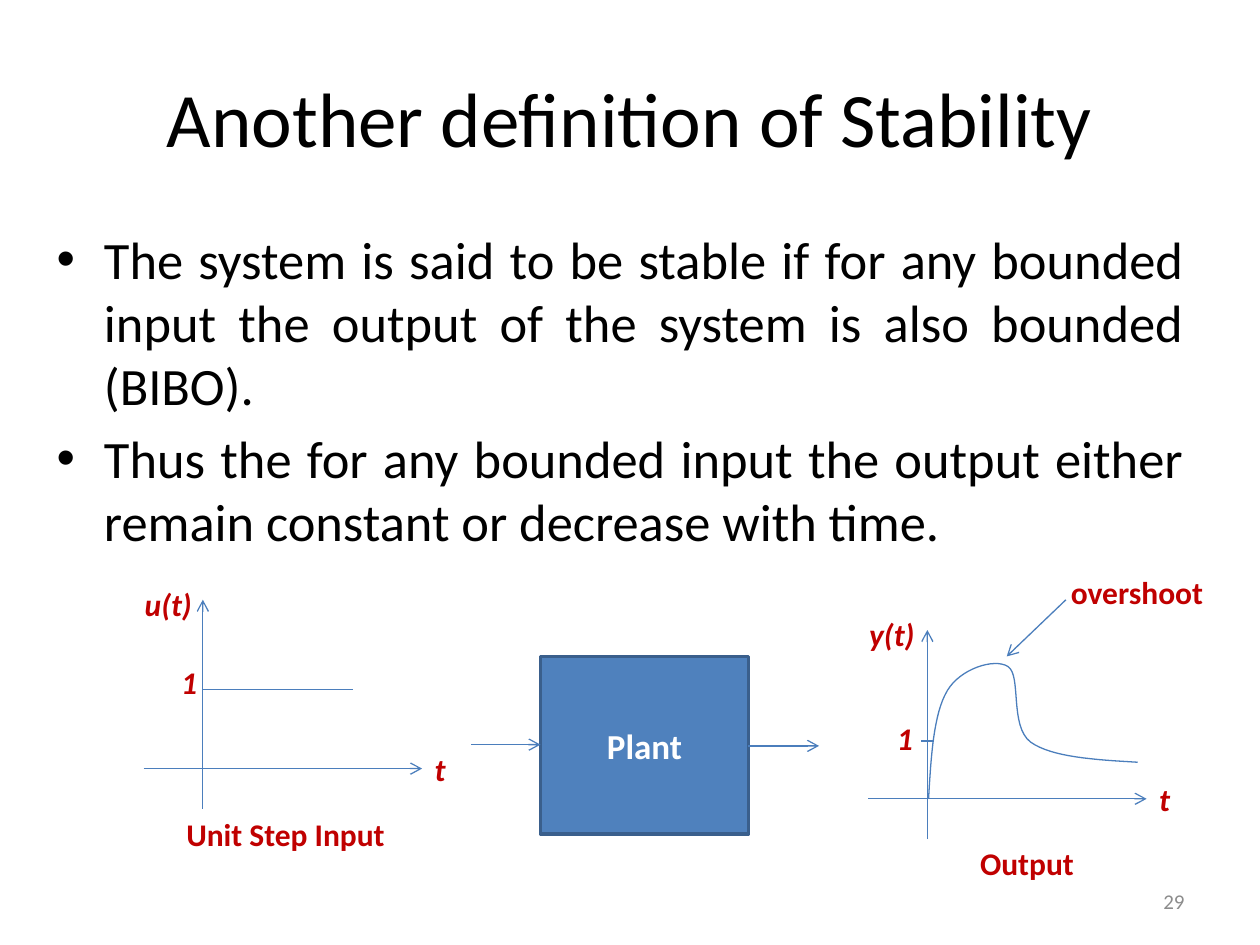
from pptx import Presentation
from pptx.dml.color import RGBColor
from pptx.enum import shapes, text
from pptx.oxml.ns import qn
from pptx.util import Inches, Pt
from lxml import etree

BLUE = "4B7EBC"
RED = "C00000"
LEFT, MID, RIGHT, JUST = (
    text.PP_ALIGN.LEFT, text.PP_ALIGN.CENTER, text.PP_ALIGN.RIGHT, text.PP_ALIGN.JUSTIFY)
BODY = (
    "The system is said to be stable if for any bounded input the output of "
    "the system is also bounded (BIBO). ",
    "Thus the for any bounded input the output either remain constant or "
    "decrease with time.",
)
START = (7.37, 6.34)
CURVE = (
    ((7.39, 6), (7.41, 5.66), (7.52, 5.48)),
    ((7.62, 5.31), (7.89, 5.22), (8, 5.29)),
    ((8.11, 5.36), (8.01, 5.76), (8.18, 5.89)),
    ((8.35, 6.01), (8.69, 6.03), (9.03, 6.05)),
)


def paint(hue):
    return RGBColor.from_string(hue)


def place(shape, x, y, w, h):
    shape.left, shape.top = Inches(x), Inches(y)
    shape.width, shape.height = Inches(w), Inches(h)


def write(shape, *lines, size=18, hue=RED, bold=False, slant=False, align=LEFT,
          anchor=text.MSO_ANCHOR.TOP, wrap=True):
    frame = shape.text_frame
    frame.auto_size = text.MSO_AUTO_SIZE.NONE if wrap else text.MSO_AUTO_SIZE.SHAPE_TO_FIT_TEXT
    frame.word_wrap = wrap
    frame.vertical_anchor = anchor
    for i, line in enumerate(lines):
        para = frame.add_paragraph() if i else frame.paragraphs[0]
        para.alignment = align
        run = para.add_run()
        run.text = line
        font = run.font
        font.name, font.size, font.bold, font.italic = "Calibri", Pt(size), bold, slant
        font.color.rgb = paint(hue)


def label(slide, words, x, y, w, slant=False):
    box = slide.shapes.add_textbox(Inches(x), Inches(y), Inches(w), Inches(0.4))
    write(box, words, bold=True, slant=slant, wrap=False)


def line(slide, x1, y1, x2, y2, arrow=True):
    link = slide.shapes.add_connector(
        shapes.MSO_CONNECTOR.STRAIGHT, Inches(x1), Inches(y1), Inches(x2), Inches(y2))
    link.line.color.rgb = paint(BLUE)
    link.line.width = Pt(0.75)
    if arrow:
        etree.SubElement(link.line._get_or_add_ln(), qn("a:tailEnd"), type="arrow")
    etree.SubElement(link._element.spPr, qn("a:effectLst"))


def axes(slide, x, y, name):
    line(slide, x - 0.47, y, x + 1.74, y)
    line(slide, x, y + 0.32, x, y - 1.34)
    label(slide, name, x - 0.56, y - 1.51, 0.58, slant=True)
    label(slide, "t", x + 1.74, y - 0.2, 0.29, slant=True)


def bend(a, b, c, d, t):
    s = 1 - t
    return tuple(Inches(s**3 * p + 3 * s * s * t * q + 3 * s * t * t * r + t**3 * e)
                 for p, q, r, e in zip(a, b, c, d))


def curve(slide, start, parts, steps=16):
    pen = slide.shapes.build_freeform(Inches(start[0]), Inches(start[1]), scale=1.0)
    for b, c, d in parts:
        pen.add_line_segments(
            [bend(start, b, c, d, i / steps) for i in range(1, steps + 1)], close=False)
        start = d
    shape = pen.convert_to_shape()
    shape.shadow.inherit = False
    shape.fill.background()
    shape.line.color.rgb = paint(BLUE)
    shape.line.width = Pt(0.75)


def block(slide, words, x, y, w, h):
    box = slide.shapes.add_shape(
        shapes.MSO_SHAPE.RECTANGLE, Inches(x), Inches(y), Inches(w), Inches(h))
    box.shadow.inherit = False
    box.fill.solid()
    box.fill.fore_color.rgb = paint("4F81BD")
    box.line.color.rgb = paint("3A5F8C")
    box.line.width = Pt(2)
    write(box, words, size=20, hue="FFFFFF", bold=True, align=MID,
          anchor=text.MSO_ANCHOR.MIDDLE)


def main():
    deck = Presentation()
    deck.slide_width, deck.slide_height = Inches(10), Inches(7.5)
    slide = deck.slides.add_slide(deck.slide_layouts[1])
    title, body = slide.placeholders
    place(title, 0.5, 0.3, 9, 1.25)
    write(title, "Another definition of Stability", size=44, hue="000000", align=MID,
          anchor=text.MSO_ANCHOR.MIDDLE)
    place(body, 0.35, 1.75, 9.15, 4.95)
    write(body, *BODY, size=30, hue="000000", align=JUST)
    page = slide.shapes.add_textbox(Inches(7.17), Inches(6.95), Inches(2.33), Inches(0.4))
    write(page, "29", size=12, hue="8C8C8C", align=RIGHT, anchor=text.MSO_ANCHOR.MIDDLE)

    axes(slide, 1.61, 6.1, "u(t)")
    line(slide, 1.61, 5.47, 2.8, 5.47, arrow=False)
    label(slide, "1", 1.34, 5.21, 0.33, slant=True)
    label(slide, "Unit Step Input", 1.38, 6.42, 1.78)

    block(slide, "Plant", 4.29, 5.21, 1.65, 1.41)
    line(slide, 3.74, 5.91, 4.29, 5.91)
    line(slide, 5.94, 5.92, 6.5, 5.92)

    axes(slide, 7.36, 6.34, "y(t)")
    curve(slide, START, CURVE)
    label(slide, "Output", 7.68, 6.65, 0.95)
    label(slide, "1", 7.02, 5.66, 0.33, slant=True)
    line(slide, 7.31, 5.88, 7.41, 5.88, arrow=False)
    line(slide, 8.46, 4.76, 7.99, 5.21)
    label(slide, "overshoot", 8.4, 4.5, 1.26)
    deck.save("out.pptx")


if __name__ == "__main__":
    main()
